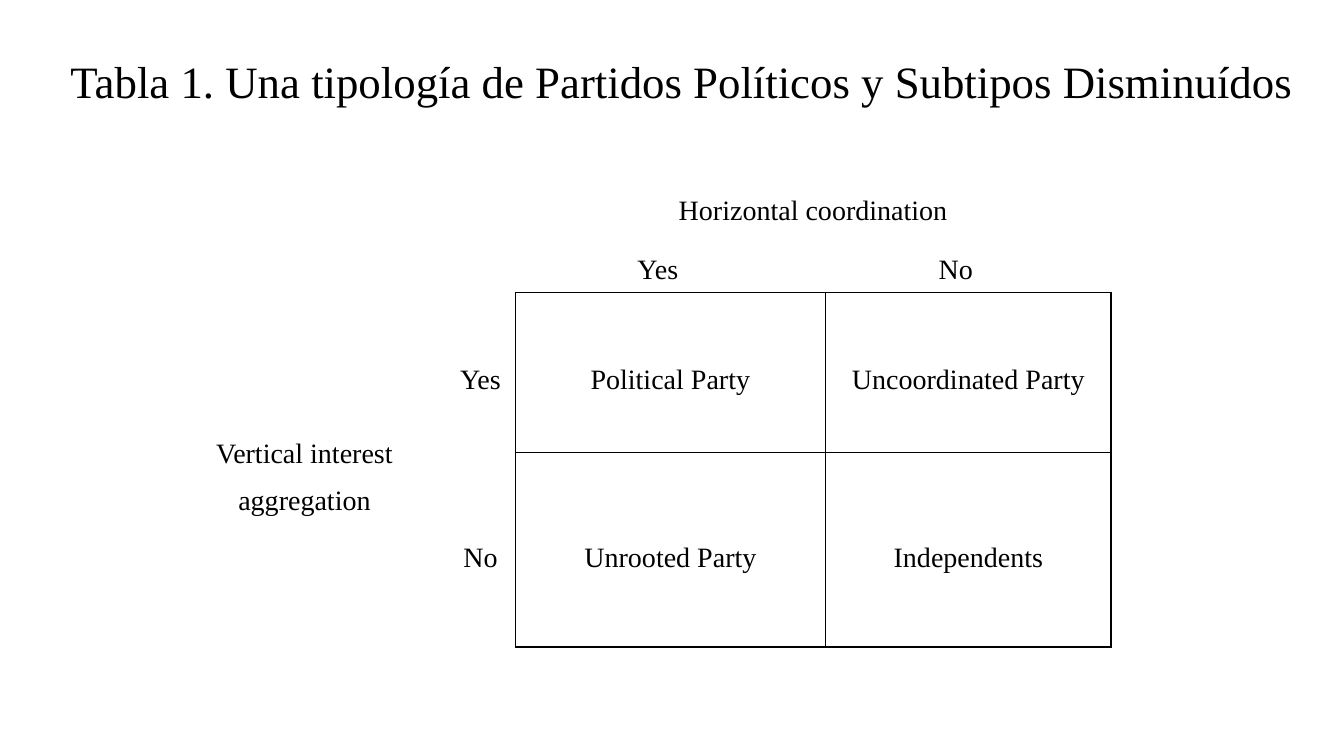
from dataclasses import dataclass

from lxml.etree import SubElement
from pptx import Presentation
from pptx.dml.color import RGBColor
from pptx.enum.text import MSO_ANCHOR, PP_ALIGN
from pptx.oxml.ns import qn
from pptx.slide import Slide
from pptx.table import Table, _Cell
from pptx.text.text import _Paragraph
from pptx.util import Inches, Pt

BLACK = RGBColor(0, 0, 0)
FONT = "Times New Roman"
NO_GRID_STYLE = "{2D5ABB26-0587-4C30-8999-92F81FD0307C}"
ALL_SIDES = "LRTB"
COLUMN_WIDTHS = (2.8, 0.69, 2.83, 0.25, 2.83)
ROW_HEIGHTS = (0.59, 0.59, 1.59, 1.93)


@dataclass(frozen=True)
class Entry:
    row: int
    column: int
    text: str = ""
    rows: int = 1
    columns: int = 1
    borders: str = ""


ENTRIES = (
    Entry(0, 0, rows=2),
    Entry(0, 1, rows=2),
    Entry(0, 2, "Horizontal coordination", columns=3),
    Entry(1, 2, "Yes", borders="B"),
    Entry(1, 3, "No", columns=2, borders="B"),
    Entry(2, 0, "Vertical interest aggregation", rows=2),
    Entry(2, 1, "Yes", borders="R"),
    Entry(2, 2, "Political Party", columns=2, borders=ALL_SIDES),
    Entry(2, 4, "Uncoordinated Party", borders=ALL_SIDES),
    Entry(3, 1, "No", borders="R"),
    Entry(3, 2, "Unrooted Party", columns=2, borders=ALL_SIDES),
    Entry(3, 4, "Independents", borders=ALL_SIDES),
)


def add_centred_run(paragraph: _Paragraph, text: str, size: int) -> None:
    paragraph.alignment = PP_ALIGN.CENTER
    run = paragraph.add_run()
    run.text = text
    run.font.name = FONT
    run.font.size = Pt(size)
    run.font.color.rgb = BLACK


def draw_borders(cell: _Cell, sides: str) -> None:
    properties = cell._tc.get_or_add_tcPr()
    for side in ALL_SIDES:
        if side in sides:
            line = SubElement(properties, qn(f"a:ln{side}"), w=str(Pt(1)))
            fill = SubElement(line, qn("a:solidFill"))
            SubElement(fill, qn("a:srgbClr"), val=str(BLACK))


def fill_entry(table: Table, entry: Entry) -> None:
    cell = table.cell(entry.row, entry.column)
    if entry.rows > 1 or entry.columns > 1:
        cell.merge(table.cell(entry.row + entry.rows - 1, entry.column + entry.columns - 1))
    cell.vertical_anchor = MSO_ANCHOR.MIDDLE
    cell.margin_left = cell.margin_right = Inches(0.07)
    cell.margin_top = cell.margin_bottom = 0
    draw_borders(cell, entry.borders)
    cell.fill.background()
    if entry.text:
        paragraph = cell.text_frame.paragraphs[0]
        paragraph.line_spacing = 1.5
        add_centred_run(paragraph, entry.text, 20)


def add_typology(slide: Slide) -> None:
    frame = slide.shapes.add_table(
        len(ROW_HEIGHTS), len(COLUMN_WIDTHS),
        Inches(1.62), Inches(1.72), Inches(sum(COLUMN_WIDTHS)), Inches(sum(ROW_HEIGHTS)),
    )
    table = frame.table
    table.first_row = table.horz_banding = False
    table._tbl.tblPr.find(qn("a:tableStyleId")).text = NO_GRID_STYLE
    for column, width in zip(table.columns, COLUMN_WIDTHS):
        column.width = Inches(width)
    for row, height in zip(table.rows, ROW_HEIGHTS):
        row.height = Inches(height)
    for entry in ENTRIES:
        fill_entry(table, entry)


def add_title(slide: Slide) -> None:
    box = slide.shapes.add_textbox(Inches(0.05), Inches(0.48), Inches(12.94), Inches(0.64))
    frame = box.text_frame
    frame.word_wrap = False
    frame.vertical_anchor = MSO_ANCHOR.MIDDLE
    paragraph = frame.paragraphs[0]
    add_centred_run(
        paragraph, "Tabla 1. Una tipología de Partidos Políticos y Subtipos Disminuídos", 32
    )
    paragraph._p.get_or_add_pPr().set("indent", str(Inches(0.49)))


def main() -> None:
    presentation = Presentation()
    presentation.slide_width = Inches(13.33)
    presentation.slide_height = Inches(7.5)
    slide = presentation.slides.add_slide(presentation.slide_layouts[6])
    add_typology(slide)
    add_title(slide)
    presentation.save("out.pptx")


if __name__ == "__main__":
    main()
